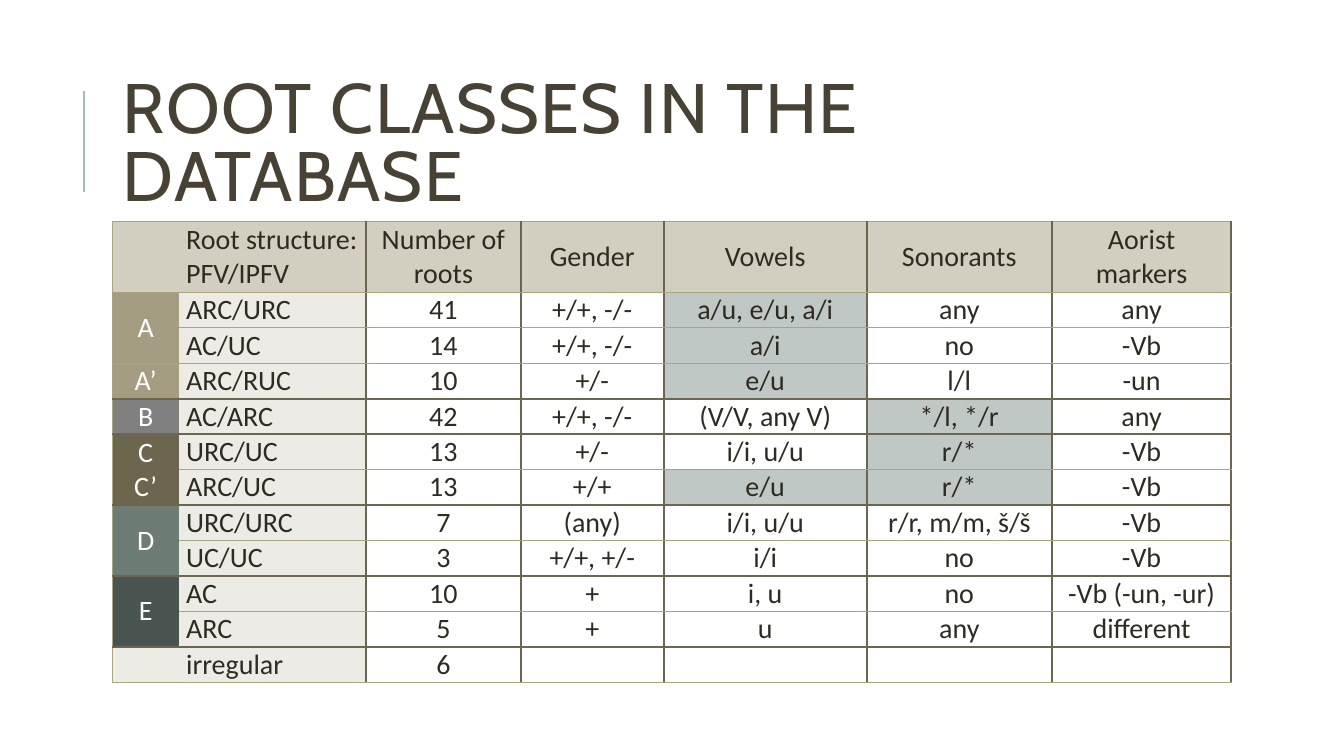
from lxml import etree
from pptx import Presentation
from pptx.dml.color import RGBColor
from pptx.enum.shapes import MSO_CONNECTOR
from pptx.enum.text import MSO_ANCHOR, MSO_AUTO_SIZE, PP_ALIGN
from pptx.oxml.ns import qn
from pptx.util import Cm, Pt

LEFT, CENTER, JUSTIFY = PP_ALIGN.LEFT, PP_ALIGN.CENTER, PP_ALIGN.JUSTIFY
MIDDLE = MSO_ANCHOR.MIDDLE
NO_FIT = MSO_AUTO_SIZE.NONE
STRAIGHT = MSO_CONNECTOR.STRAIGHT
TITLE_ONLY = 5
PLAIN_STYLE = "{2D5ABB26-0587-4C30-8999-92F81FD0307C}"

COLORS = {
    "title": "474233", "text": "2E2B21", "white": "FFFFFF", "accent": "9CBEBD",
    "thick": "6D664E", "thin": "A9A57C",
    "head": "D2CEC0", "root": "EDEBE6", "mark": "BFC8C4", "rest": "EEEDE5",
    "A": "A59D82", "A’": "A59D82", "B": "808080",
    "C\nC’": "6D664E", "D": "6D7D76", "E": "48544F",
}
WEIGHTS = {"thick": 1.5, "thin": 0.75}

ROWS = [
    ["", "Root structure: PFV/IPFV", "Number of roots", "Gender", "Vowels",
     "Sonorants", "Aorist markers"],
    ["A", "ARC/URC", "41", "+/+, -/-", "a/u, e/u, a/i", "any", "any"],
    ["", "AC/UC", "14", "+/+, -/-", "a/i", "no", "-Vb"],
    ["A’", "ARC/RUC", "10", "+/-", "e/u", "l/l", "-un"],
    ["B", "AC/ARC", "42", "+/+, -/-", "(V/V, any V)", "*/l, */r", "any"],
    ["C\nC’", "URC/UC", "13", "+/-", "i/i, u/u", "r/*", "-Vb"],
    ["", "ARC/UC", "13", "+/+", "e/u", "r/*", "-Vb"],
    ["D", "URC/URC", "7", "(any)", "i/i, u/u", "r/r, m/m, š/š", "-Vb"],
    ["", "UC/UC", "3", "+/+, +/-", "i/i", "no", "-Vb"],
    ["E", "AC", "10", "+", "i, u", "no", "-Vb (-un, -ur)"],
    ["", "ARC", "5", "+", "u", "any", "different"],
    ["", "irregular", "6", "", "", "", ""],
]
WIDTHS = [1.68, 4.72, 3.89, 3.61, 5.11, 4.67, 4.52]
HEAD_H, TABLE_H = 1.8, 11.63
PAIRS = [1, 5, 7, 9]            # first rows of the two-row classes
GROUP_ENDS = [3, 4, 6, 8, 10]   # rows closed by a thick line
MARKED = {(1, 4), (2, 4), (3, 4), (6, 4), (4, 5), (5, 5), (6, 5)}


def rgb(name):
    return RGBColor.from_string(COLORS[name])


def rule(row):
    """Kind of the line under a row."""
    return "thick" if row in GROUP_ENDS else "thin"


def edges(row, col):
    """Kinds of the left, right, top and bottom lines of a cell."""
    first, last = row, row
    if col == 0 and row in PAIRS:
        last = row + 1
    elif col == 0 and row - 1 in PAIRS:
        first = row - 1
    left = ["thin", None][col] if col < 2 else "thick"
    right = "thick" if col else None
    return {"L": left, "R": right, "T": rule(first - 1), "B": rule(last)}


def shade(row, col):
    """Colour name of a cell's fill, or None."""
    if row == 0:
        return "head"
    if col == 0:
        return ROWS[row][0] or ROWS[row - 1][0] or "rest"
    if col == 1:
        return "root"
    return "mark" if (row, col) in MARKED else None


class Deck:
    """Holds the style and the current slide."""

    def __init__(self, head_font, body_font):
        self.head_font, self.body_font = head_font, body_font
        self.prs = Presentation()
        self.prs.slide_width, self.prs.slide_height = Cm(33.87), Cm(19.05)
        self.slide = None

    def new(self):
        layout = self.prs.slide_layouts[TITLE_ONLY]
        self.slide = self.prs.slides.add_slide(layout)

    def style(self, para, font, size, color, align):
        para.alignment = align
        for run in para.runs:
            run.font.name, run.font.size = font, Pt(size)
            run.font.color.rgb = rgb(color)

    def title(self, text, left, top, width, height):
        box = self.slide.shapes.title
        box.left, box.top = Cm(left), Cm(top)
        box.width, box.height = Cm(width), Cm(height)
        frame = box.text_frame
        frame.text = text
        frame.word_wrap, frame.auto_size = True, NO_FIT
        frame.vertical_anchor = MIDDLE
        para = frame.paragraphs[0]
        para.line_spacing = 0.8
        self.style(para, self.head_font, 50, "title", LEFT)
        para.runs[0].font._element.set("spc", "100")

    def line(self, x1, y1, x2, y2, color, weight):
        ends = Cm(x1), Cm(y1), Cm(x2), Cm(y2)
        link = self.slide.shapes.add_connector(STRAIGHT, *ends)
        link.line.color.rgb, link.line.width = rgb(color), Pt(weight)
        etree.SubElement(link._element.spPr, qn("a:effectLst"))

    def border(self, cell, kinds):
        props = cell._tc.get_or_add_tcPr()
        for side, kind in kinds.items():
            edge = etree.SubElement(props, qn(f"a:ln{side}"))
            if kind is None:
                etree.SubElement(edge, qn("a:noFill"))
                continue
            edge.set("w", str(Pt(WEIGHTS[kind])))
            fill = etree.SubElement(edge, qn("a:solidFill"))
            etree.SubElement(fill, qn("a:srgbClr"), val=COLORS[kind])

    def cell(self, cell, row, col):
        cell.text_frame.text = ROWS[row][col]
        cell.vertical_anchor = MIDDLE
        cell.margin_left = cell.margin_right = Cm(0.18)
        cell.margin_top = cell.margin_bottom = 0
        color = "white" if col == 0 else "text"
        align = CENTER
        if col == 1:
            align = JUSTIFY if row else LEFT
        for para in cell.text_frame.paragraphs:
            self.style(para, self.body_font, 20, color, align)
        self.border(cell, edges(row, col))
        name = shade(row, col)
        if name:
            cell.fill.solid()
            cell.fill.fore_color.rgb = rgb(name)
        else:
            cell.fill.background()

    def table(self, left, top):
        size = Cm(sum(WIDTHS)), Cm(TABLE_H)
        frame = self.slide.shapes.add_table(
            len(ROWS), len(WIDTHS), Cm(left), Cm(top), *size)
        table = frame.table
        table.first_row = table.horz_banding = False
        table._tbl.tblPr.find(qn("a:tableStyleId")).text = PLAIN_STYLE
        for col, width in zip(table.columns, WIDTHS):
            col.width = Cm(width)
        for row in table.rows:
            row.height = Cm((TABLE_H - HEAD_H) / (len(ROWS) - 1))
        table.rows[0].height = Cm(HEAD_H)
        for row in range(len(ROWS)):
            for col in range(len(WIDTHS)):
                self.cell(table.cell(row, col), row, col)
        for row in PAIRS:
            table.cell(row, 0).merge(table.cell(row + 1, 0))


def main():
    deck = Deck("Cabin", "Calibri")
    deck.new()
    deck.line(2.12, 4.83, 2.12, 2.3, "accent", 1.5)
    deck.title("ROOT CLASSES IN THE DATABASE", 2.84, 1.63, 27, 4.17)
    deck.table(2.83, 5.57)
    deck.prs.save("out.pptx")


if __name__ == "__main__":
    main()
